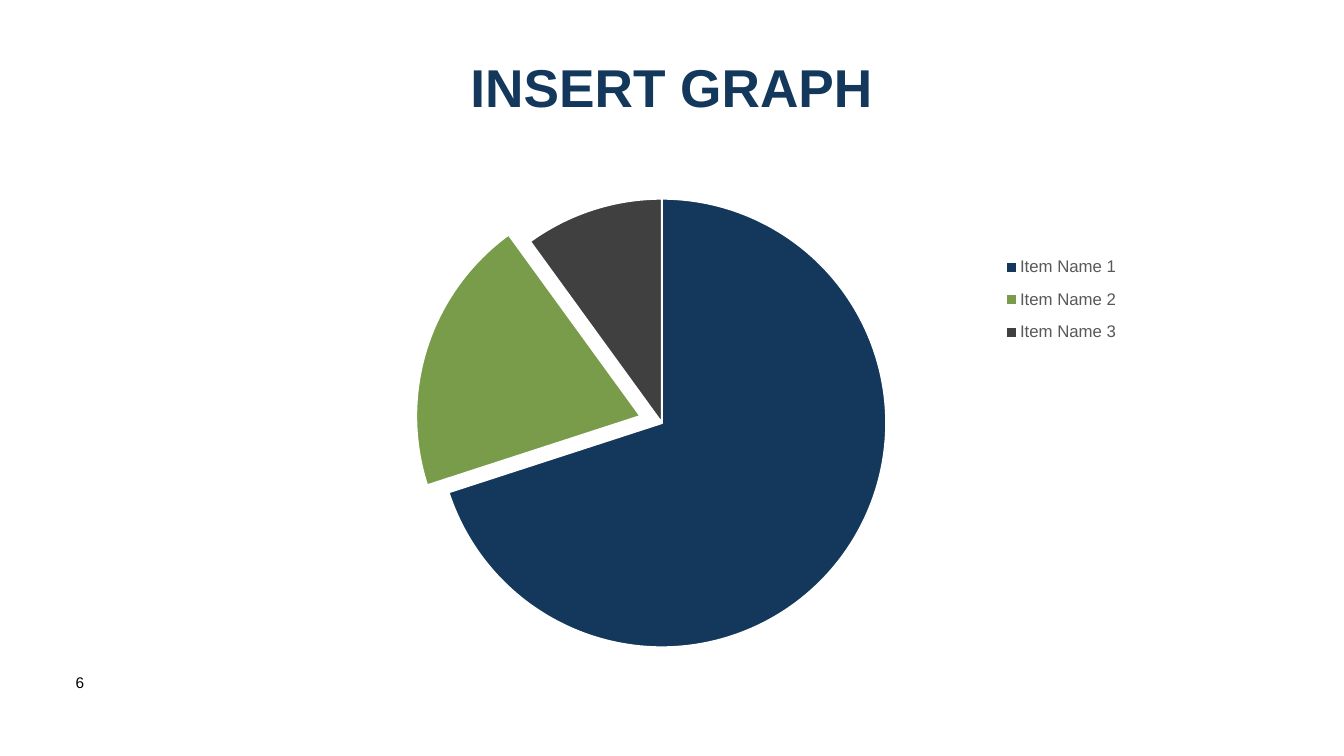
import pptx
import pptx.chart.data
import pptx.dml.color
import pptx.enum.chart
import pptx.enum.text
import pptx.oxml
import pptx.oxml.ns
import pptx.util
from pptx.util import Pt

FONT = "Arial"
NAVY = "13385C"
TITLE = ("INSERT GRAPH", (178.5, 37.5, 602.5, 48))
PAGE_NUMBER = ("6", (47, 477.5, 42, 39))
ITEMS = [
    ("Item Name 1", 70, NAVY),
    ("Item Name 2", 20, "789C49"),
    ("Item Name 3", 10, "404041"),
]
EXPLODED_ITEM, EXPLOSION = 1, 10
CHART_BOX = (47, 132, 851, 365)
PIE_CENTER, PIE_RADIUS = (472.8, 302.2), 160.3  # radius leaves room for the explosion
LEGEND_BOX = (713, 174, 90, 80)


def color(hex_code):
    return pptx.dml.color.RGBColor.from_string(hex_code)


def add_text(slide, text, box, size, hex_code, bold=False):
    frame = slide.shapes.add_textbox(*map(Pt, box)).text_frame
    frame.word_wrap = True
    paragraph = frame.paragraphs[0]
    paragraph.text = text
    font = paragraph.font
    font.name, font.size, font.bold = FONT, Pt(size), bold
    font.color.rgb = color(hex_code)
    return frame


def set_layout(parent, index, box, inner=False):
    """Place a chart part at a box given in slide points."""
    for layout in parent.findall(pptx.oxml.ns.qn("c:layout")):
        parent.remove(layout)
    left, top, width, height = CHART_BOX
    fractions = {
        "x": (box[0] - left) / width,
        "y": (box[1] - top) / height,
        "w": box[2] / width,
        "h": box[3] / height,
    }
    target = '<c:layoutTarget val="inner"/>' if inner else ""
    modes = '<c:xMode val="edge"/><c:yMode val="edge"/>'
    sizes = "".join(f'<c:{key} val="{value:.4f}"/>' for key, value in fractions.items())
    parent.insert(index, pptx.oxml.parse_xml(
        f'<c:layout {pptx.oxml.ns.nsdecls("c")}><c:manualLayout>'
        f"{target}{modes}{sizes}</c:manualLayout></c:layout>"))


def add_pie(slide):
    names, values, fills = zip(*ITEMS)
    data = pptx.chart.data.CategoryChartData()
    data.categories = names
    data.add_series("Series 1", values)
    chart = slide.shapes.add_chart(
        pptx.enum.chart.XL_CHART_TYPE.PIE, *map(Pt, CHART_BOX), data).chart
    chart.has_title = False
    chart.font.name, chart.font.size = FONT, Pt(10)
    chart.font.color.rgb = color("000000")

    pie = chart.plots[0]
    pie.vary_by_categories = True
    for index, fill in enumerate(fills):
        point = pie.series[0].points[index]
        point.format.fill.solid()
        point.format.fill.fore_color.rgb = color(fill)
        point.format.line.color.rgb = color("FFFFFF")
        point.format.line.width = Pt(1.5)
        if index == EXPLODED_ITEM:
            point.format.fill._xPr.addprevious(pptx.oxml.parse_xml(
                f'<c:explosion {pptx.oxml.ns.nsdecls("c")} val="{EXPLOSION}"/>'))

    chart.has_legend = True
    legend = chart.legend
    legend.position = pptx.enum.chart.XL_LEGEND_POSITION.BOTTOM
    legend.include_in_layout = False
    legend.font.name, legend.font.size = FONT, Pt(12)
    legend.font.color.rgb = color("595959")
    set_layout(legend._element, 1, LEGEND_BOX)

    diameter = 2 * PIE_RADIUS
    pie_box = (PIE_CENTER[0] - PIE_RADIUS, PIE_CENTER[1] - PIE_RADIUS, diameter, diameter)
    set_layout(pie._element.getparent(), 0, pie_box, inner=True)


def main():
    deck = pptx.Presentation()
    deck.slide_width, deck.slide_height = Pt(960), Pt(540)
    slide = deck.slides.add_slide(deck.slide_layouts[6])
    add_text(slide, *PAGE_NUMBER, 11, "000000")
    add_pie(slide)
    title = add_text(slide, *TITLE, 38, NAVY, bold=True)
    title.vertical_anchor = pptx.enum.text.MSO_ANCHOR.MIDDLE
    title.paragraphs[0].alignment = pptx.enum.text.PP_ALIGN.CENTER
    deck.save("out.pptx")


if __name__ == "__main__":
    main()
